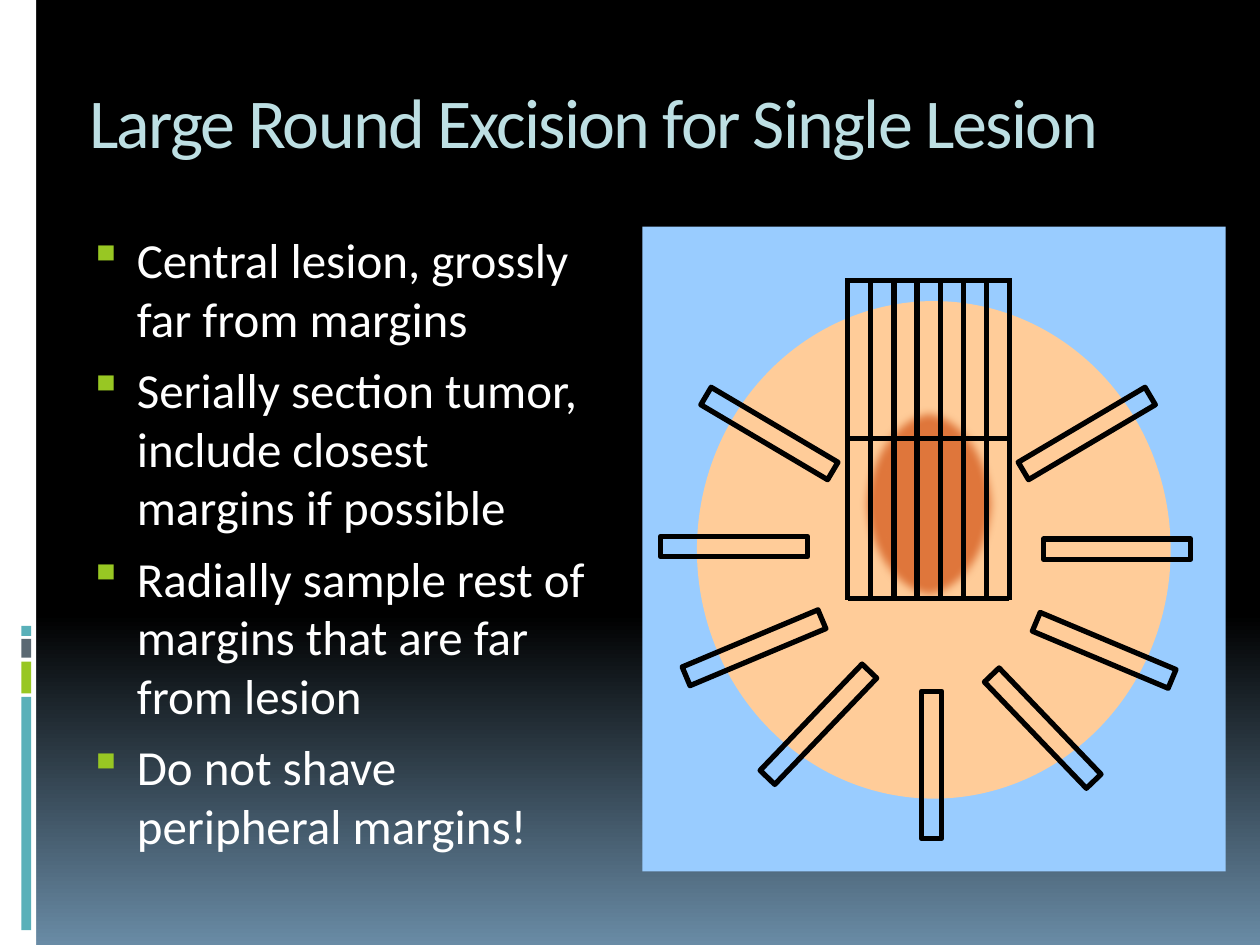
from lxml import etree
from pptx import Presentation
from pptx.dml.color import RGBColor
from pptx.enum.shapes import MSO_CONNECTOR, MSO_SHAPE
from pptx.oxml.ns import qn
from pptx.util import Cm, Pt

RECT, OVAL = MSO_SHAPE.RECTANGLE, MSO_SHAPE.OVAL
STRAIGHT = MSO_CONNECTOR.STRAIGHT
FONT, INK, WHITE, TEAL, GREEN = "Calibri", "000000", "FFFFFF", "59B0B9", "98C723"

TITLE = "Large Round Excision for Single Lesion"
POINTS = [
    "Central lesion, grossly far from margins",
    "Serially section tumor, include closest margins if possible",
    "Radially sample rest of margins that are far from lesion",
    "Do not shave peripheral margins!",
]
BACKGROUND_STOPS = [(0, INK), (65, INK), (100, "698BA5")]  # percent, colour

# All lengths below are in centimetres.
SIDEBAR = (0, 0, 0.73, 19.05)
SIDEBAR_MARKS = [  # top, height, colour
    (14.05, 4.7, TEAL),
    (13.34, 0.64, GREEN),
    (12.88, 0.38, "5B6973"),
    (12.62, 0.2, TEAL),
]
PANEL = (12.95, 4.57, 11.76, 13)
SPECIMEN = (14.05, 6.07, 9.55, 10.03)
LESION = (17.3, 8.15, 2.84, 4.01)
STRIP_LENGTH, STRIP_WIDTH = 2.97, 0.41
MARGIN_STRIPS = [  # centre x, centre y, rotation
    (22.52, 11.07, 0),
    (14.8, 11.02, 0),
    (16.5, 14.6, 313.8),
    (21.02, 14.68, 46.2),
    (18.78, 15.42, 90),
    (22.26, 13.11, 22.8),
    (15.2, 13.06, 337.2),
    (15.51, 8.74, 30.6),
    (21.91, 8.74, 329.4),
]
GRID_LEFT, GRID_RIGHT, GRID_TOP, GRID_BOTTOM = 17.09, 20.35, 5.61, 12.1
SLICES = 7
GRID_ROWS = [5.66, 8.84, 12.07]


def rgb(value):
    return RGBColor.from_string(value)


def add_xml(parent, tag, **attributes):
    return etree.SubElement(parent, qn(tag), attributes)


def add_shape(preset, box, fill=None):
    """Add a filled shape, or a hollow black outline when there is no fill."""
    shape = slide.shapes.add_shape(preset, *map(Cm, box))
    shape.shadow.inherit = False
    if fill:
        shape.fill.solid()
        shape.fill.fore_color.rgb = rgb(fill)
        shape.line.fill.background()
    else:
        shape.fill.background()
        shape.line.color.rgb = rgb(INK)
        shape.line.width = Pt(3)
    return shape


def add_cut(x1, y1, x2, y2):
    cut = slide.shapes.add_connector(STRAIGHT, *map(Cm, (x1, y1, x2, y2)))
    cut.line.color.rgb = rgb(INK)
    cut.line.width = Pt(3)
    add_xml(cut._element.spPr, "a:effectLst")


def add_text(box, lines, size, color):
    frame = slide.shapes.add_textbox(*map(Cm, box)).text_frame
    frame.word_wrap = True
    frame.text = "\n".join(lines)
    for paragraph in frame.paragraphs:
        font = paragraph.runs[0].font
        font.name, font.size, font.color.rgb = FONT, Pt(size), rgb(color)
    return frame.paragraphs


def add_bullet(paragraph):
    properties = paragraph._p.get_or_add_pPr()
    properties.set("marL", str(Cm(1.14)))
    properties.set("indent", str(-Cm(0.97)))
    add_xml(add_xml(properties, "a:buClr"), "a:srgbClr", val=GREEN)
    add_xml(properties, "a:buSzPct", val="95000")
    add_xml(properties, "a:buChar", char="▪")


def paint_background():
    fill = slide.background.fill
    fill.gradient()
    fill.gradient_angle = 270  # counter-clockwise, so top to bottom
    stops = fill.gradient_stops[0]._gs.getparent()
    for stop in list(stops):
        stops.remove(stop)
    for percent, color in BACKGROUND_STOPS:
        stop = add_xml(stops, "a:gs", pos=str(percent * 1000))
        add_xml(stop, "a:srgbClr", val=color)


presentation = Presentation()
presentation.slide_width, presentation.slide_height = Cm(25.4), Cm(19.05)
slide = presentation.slides.add_slide(presentation.slide_layouts[6])
paint_background()

add_shape(RECT, SIDEBAR, WHITE)
for top, height, color in SIDEBAR_MARKS:
    add_shape(RECT, (0.43, top, 0.2, height), color)

title = add_text((1.55, 1.45, 22.58, 2.54), [TITLE], 40, "BDDFE3")[0]
title.runs[0].font._element.set("spc", "-100")

points = add_text((1.37, 4.5, 10.82, 13.13), POINTS, 28, WHITE)
for index, point in enumerate(points):
    add_bullet(point)
    point.space_before = Pt(7 if index else 0)

add_shape(RECT, PANEL, "99CCFF")
add_shape(OVAL, SPECIMEN, "FFCC99")
lesion = add_shape(OVAL, LESION, "E0773C")
lesion_effects = lesion._element.spPr.find(qn("a:effectLst"))
add_xml(lesion_effects, "a:softEdge", rad=str(Cm(0.18)))

for x, y, rotation in MARGIN_STRIPS:
    box = (x - STRIP_LENGTH / 2, y - STRIP_WIDTH / 2, STRIP_LENGTH, STRIP_WIDTH)
    add_shape(RECT, box).rotation = rotation

for index in range(SLICES + 1):
    x = GRID_LEFT + index * (GRID_RIGHT - GRID_LEFT) / SLICES
    add_cut(x, GRID_TOP, x, GRID_BOTTOM)
for y in GRID_ROWS:
    add_cut(GRID_LEFT, y, GRID_RIGHT, y)

presentation.save("out.pptx")
